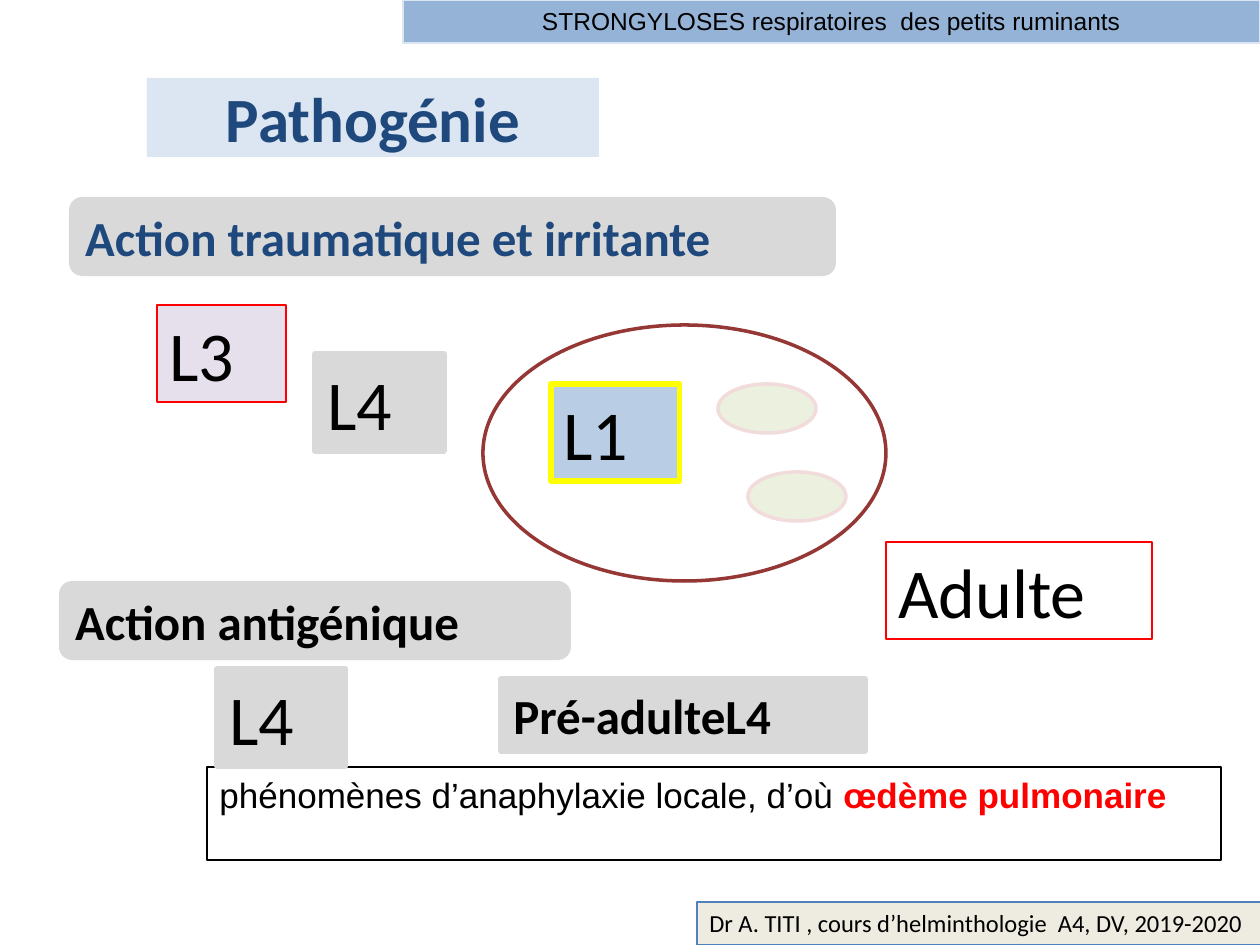
from lxml.etree import SubElement
from pptx import Presentation
from pptx.dml.color import RGBColor
from pptx.enum.shapes import MSO_SHAPE as Shape
from pptx.enum.text import MSO_ANCHOR as Anchor, MSO_AUTO_SIZE as AutoSize, PP_ALIGN as Align
from pptx.oxml.ns import qn
from pptx.util import Pt

EMU_PER_PX = 914400 // 126
SLIDE_SIZE = (1260, 945)
STAGE_SIZE = (129, 97)
EGG_SIZE = (98, 49)

COLORS = {
    "black": "000000", "white": "FFFFFF", "navy": "1F497D", "grey": "D9D9D9",
    "pale blue": "DCE6F2", "light blue": "B9CDE5", "header blue": "95B3D7",
    "lilac": "E6E0EC", "pale green": "EBF1DE", "pale pink": "F2DCDB",
    "cream": "EEECE1", "blue": "4F81BD", "red": "FF0000",
    "yellow": "FFFF00", "brown": "953735",
}


def px(length):
    return length * EMU_PER_PX


def color(name):
    return RGBColor.from_string(COLORS[name])


def place(shape, box):
    shape.left, shape.top, shape.width, shape.height = map(px, box)


def paint(shape, fill=None, line=None, width=0.75):
    if fill:
        shape.fill.solid()
        shape.fill.fore_color.rgb = color(fill)
    else:
        shape.fill.background()
    if line:
        shape.line.color.rgb = color(line)
        shape.line.width = Pt(width)
    else:
        shape.line.fill.background()


def write(shape, text, size, ink="black", bold=False, font="Calibri",
          align=Align.LEFT, anchor=Anchor.TOP):
    frame = shape.text_frame
    frame.word_wrap = True
    frame.auto_size = AutoSize.NONE
    frame.vertical_anchor = anchor
    paragraph = frame.paragraphs[0]
    paragraph.text = text
    paragraph.alignment = align
    paragraph.font.name = font
    paragraph.font.size = Pt(size)
    paragraph.font.bold = bold
    paragraph.font.color.rgb = color(ink)
    return paragraph


def add_shape(slide, kind, box, fill=None, line=None, width=0.75):
    shape = slide.shapes.add_shape(kind, *map(px, box))
    shape.shadow.inherit = False
    paint(shape, fill, line, width)
    return shape


def add_label(slide, box, text, size, fill=None, line=None, width=0.75, **style):
    shape = add_shape(slide, Shape.RECTANGLE, box, fill, line, width)
    return write(shape, text, size, **style)


def add_heading(slide, box, text, ink):
    shape = add_shape(slide, Shape.ROUNDED_RECTANGLE, box, "grey")
    write(shape, text, 28, ink, bold=True, anchor=Anchor.MIDDLE)


def add_stage(slide, left, top, text, fill, line, width=3):
    add_label(slide, (left, top, *STAGE_SIZE), text, 40, fill, line, width)


def format_title(title):
    place(title, (147, 78, 452, 79))
    # Rounded outline for the placeholder, ahead of its fill
    geometry = SubElement(title.element.spPr, qn("a:prstGeom"), prst="roundRect")
    SubElement(geometry, qn("a:avLst"))
    paint(title, "pale blue")
    write(title, "Pathogénie", 36, "navy", bold=True,
          align=Align.CENTER, anchor=Anchor.MIDDLE)


def main():
    presentation = Presentation()
    presentation.slide_width, presentation.slide_height = map(px, SLIDE_SIZE)
    slide = presentation.slides.add_slide(presentation.slide_layouts[5])
    format_title(slide.shapes.title)

    # Traumatic action: larval stages, eggs in the nodule, adult
    add_heading(slide, (69, 197, 767, 79), "Action traumatique et irritante", "navy")
    add_stage(slide, 157, 305, "L3", "lilac", "red", 0.75)
    add_stage(slide, 315, 354, "L4", "grey", "grey")
    add_stage(slide, 551, 384, "L1", "light blue", "yellow")
    for left, top in ((718, 384), (748, 472)):
        add_shape(slide, Shape.OVAL, (left, top, *EGG_SIZE), "pale green", "pale pink", 2)
    add_shape(slide, Shape.OVAL, (483, 325, 403, 256), line="brown", width=2)
    add_label(slide, (886, 542, 266, 97), "Adulte", 40, "white", "red")

    # Antigenic action: consequence, then the stages involved
    add_heading(slide, (59, 581, 512, 79), "Action antigénique", "black")
    consequence = add_label(slide, (207, 767, 1014, 93),
                            "phénomènes d’anaphylaxie locale, d’où ", 20,
                            line="black", font="Arial")
    oedema = consequence.add_run()
    oedema.text = "œdème pulmonaire"
    oedema.font.bold = True
    oedema.font.color.rgb = color("red")
    add_stage(slide, 217, 669, "L4", "grey", "grey")
    add_label(slide, (501, 679, 364, 72), "Pré-adulteL4", 28, "grey", "grey", 3, bold=True)

    # Footer and header bands
    add_label(slide, (697, 902, 571, 43),
              "Dr A. TITI , cours d’helminthologie  A4, DV, 2019-2020", 14, "cream", "blue")
    add_label(slide, (403, 0, 857, 43),
              "STRONGYLOSES respiratoires  des petits ruminants", 14,
              "header blue", "pale blue", font="Arial", align=Align.CENTER)

    presentation.save("out.pptx")


if __name__ == "__main__":
    main()
